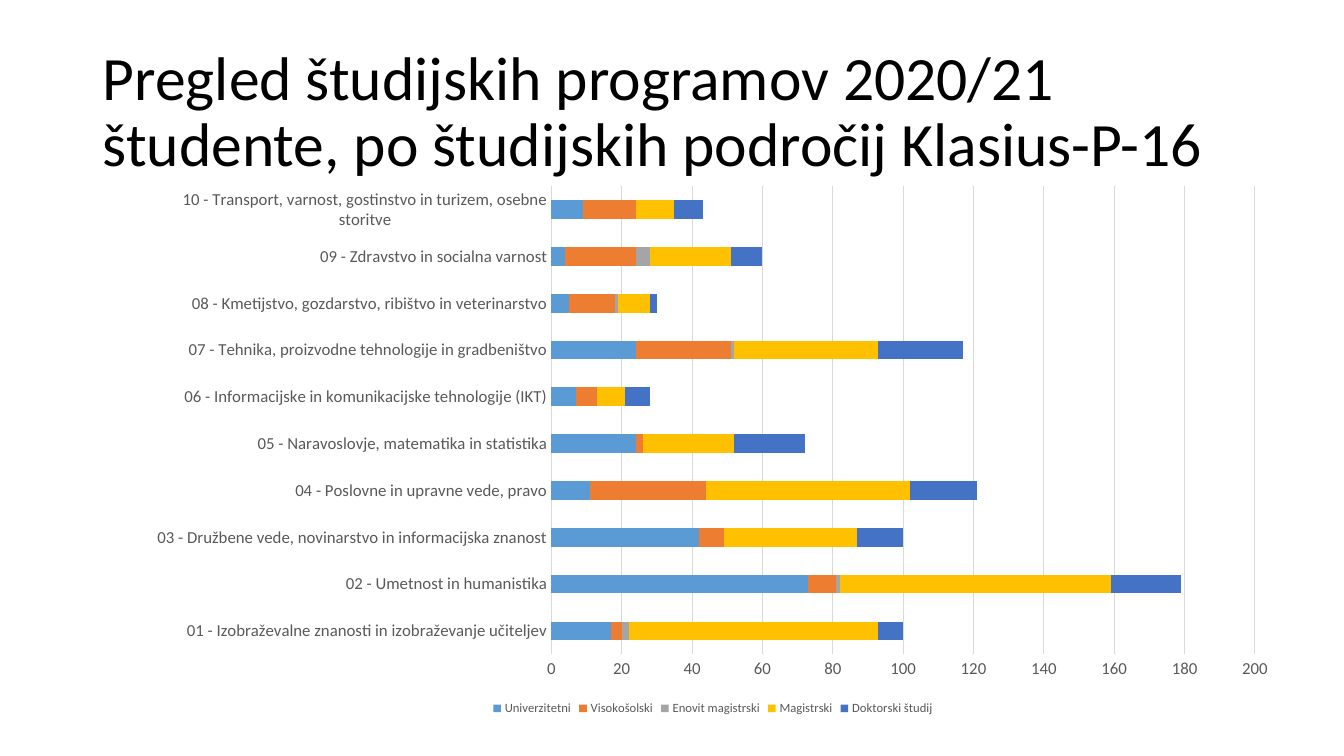
"""Build a slide with a stacked bar chart of study programmes by Klasius-P-16 field."""
import pptx
import pptx.chart.data
import pptx.dml.color
import pptx.enum.chart
import pptx.enum.text
import pptx.oxml
import pptx.oxml.ns
import pptx.util

PX = 9144
THEME = {
    "font": "Calibri",
    "title": "000000",
    "label": "595959",
    "grid": "D9D9D9",
    "title_size": 44,
    "axis_size": 12,
    "legend_size": 9,
    "base_size": 10,
}
FIELDS = [
    "01 - Izobraževalne znanosti in izobraževanje učiteljev",
    "02 - Umetnost in humanistika",
    "03 - Družbene vede, novinarstvo in informacijska znanost",
    "04 - Poslovne in upravne vede, pravo",
    "05 - Naravoslovje, matematika in statistika",
    "06 - Informacijske in komunikacijske tehnologije (IKT)",
    "07 - Tehnika, proizvodne tehnologije in gradbeništvo",
    "08 - Kmetijstvo, gozdarstvo, ribištvo in veterinarstvo",
    "09 - Zdravstvo in socialna varnost",
    "10 - Transport, varnost, gostinstvo in turizem, osebne storitve",
]
PROGRAMMES = [
    ("Univerzitetni", "5B9BD5", [17, 73, 42, 11, 24, 7, 24, 5, 4, 9]),
    ("Visokošolski", "ED7D31", [3, 8, 7, 33, 2, 6, 27, 13, 20, 15]),
    ("Enovit magistrski", "A5A5A5", [2, 1, None, None, None, None, 1, 1, 4, None]),
    ("Magistrski", "FFC000", [71, 77, 38, 58, 26, 8, 41, 9, 23, 11]),
    ("Doktorski študij", "4472C4", [7, 20, 13, 19, 20, 7, 24, 2, 9, 8]),
]


def style_font(font, size, color):
    font.name = THEME["font"]
    font.size = pptx.util.Pt(size)
    font.color.rgb = pptx.dml.color.RGBColor.from_string(color)


def write(box, text, *, size, color, line_spacing):
    para = box.text_frame.paragraphs[0]
    para.line_spacing = line_spacing
    span = para.add_run()
    span.text = text
    style_font(span.font, size, color)


deck = pptx.Presentation()
deck.slide_width, deck.slide_height = 1333 * PX, 750 * PX
page = deck.slides.add_slide(deck.slide_layouts[5])

title = page.shapes.title
title.left, title.top, title.width, title.height = 92 * PX, 40 * PX, 1150 * PX, 145 * PX
title.text_frame.word_wrap = True
title.text_frame.auto_size = pptx.enum.text.MSO_AUTO_SIZE.NONE
title.text_frame.vertical_anchor = pptx.enum.text.MSO_ANCHOR.MIDDLE
write(title, "Pregled študijskih programov 2020/21 študente, po študijskih področij Klasius-P-16",
      size=THEME["title_size"], color=THEME["title"], line_spacing=0.9)
title.text_frame.paragraphs[0].alignment = pptx.enum.text.PP_ALIGN.LEFT

data = pptx.chart.data.CategoryChartData()
data.categories = FIELDS
for name, color, values in PROGRAMMES:
    data.add_series(name, values)
chart = page.shapes.add_chart(
    pptx.enum.chart.XL_CHART_TYPE.BAR_STACKED,
    135 * PX, 174 * PX, 1144 * PX, 540 * PX, data).chart
chart.has_title = False
style_font(chart.font, THEME["base_size"], THEME["title"])

plot = chart.plots[0]
plot.gap_width = 150
plot.overlap = 100
plot.vary_by_categories = False
for series, (name, color, values) in zip(plot.series, PROGRAMMES):
    series.format.fill.solid()
    series.format.fill.fore_color.rgb = pptx.dml.color.RGBColor.from_string(color)

grid_color = pptx.dml.color.RGBColor.from_string(THEME["grid"])
for axis in (chart.category_axis, chart.value_axis):
    axis.major_tick_mark = pptx.enum.chart.XL_TICK_MARK.NONE
    axis.minor_tick_mark = pptx.enum.chart.XL_TICK_MARK.NONE
    style_font(axis.tick_labels.font, THEME["axis_size"], THEME["label"])
chart.category_axis.has_major_gridlines = False
chart.value_axis.has_major_gridlines = True
chart.value_axis.minimum_scale = 0
chart.value_axis.maximum_scale = 200
chart.value_axis.major_unit = 20
chart.value_axis.format.line.fill.background()
for line in (chart.category_axis.format.line, chart.value_axis.major_gridlines.format.line):
    line.color.rgb = grid_color
    line.width = pptx.util.Pt(0.75)

chart.has_legend = True
chart.legend.position = pptx.enum.chart.XL_LEGEND_POSITION.BOTTOM
chart.legend.include_in_layout = False
style_font(chart.legend.font, THEME["legend_size"], THEME["label"])

plot_area = chart.element.find(".//" + pptx.oxml.ns.qn("c:plotArea"))
for old_layout in plot_area.findall(pptx.oxml.ns.qn("c:layout")):
    plot_area.remove(old_layout)
plot_area.insert(0, pptx.oxml.parse_xml(
    f'<c:layout {pptx.oxml.ns.nsdecls("c")}><c:manualLayout>'
    '<c:layoutTarget val="inner"/><c:xMode val="edge"/><c:yMode val="edge"/>'
    '<c:x val="0.36"/><c:y val="0.02"/><c:w val="0.61"/><c:h val="0.86"/>'
    '</c:manualLayout></c:layout>'))

deck.save("out.pptx")
